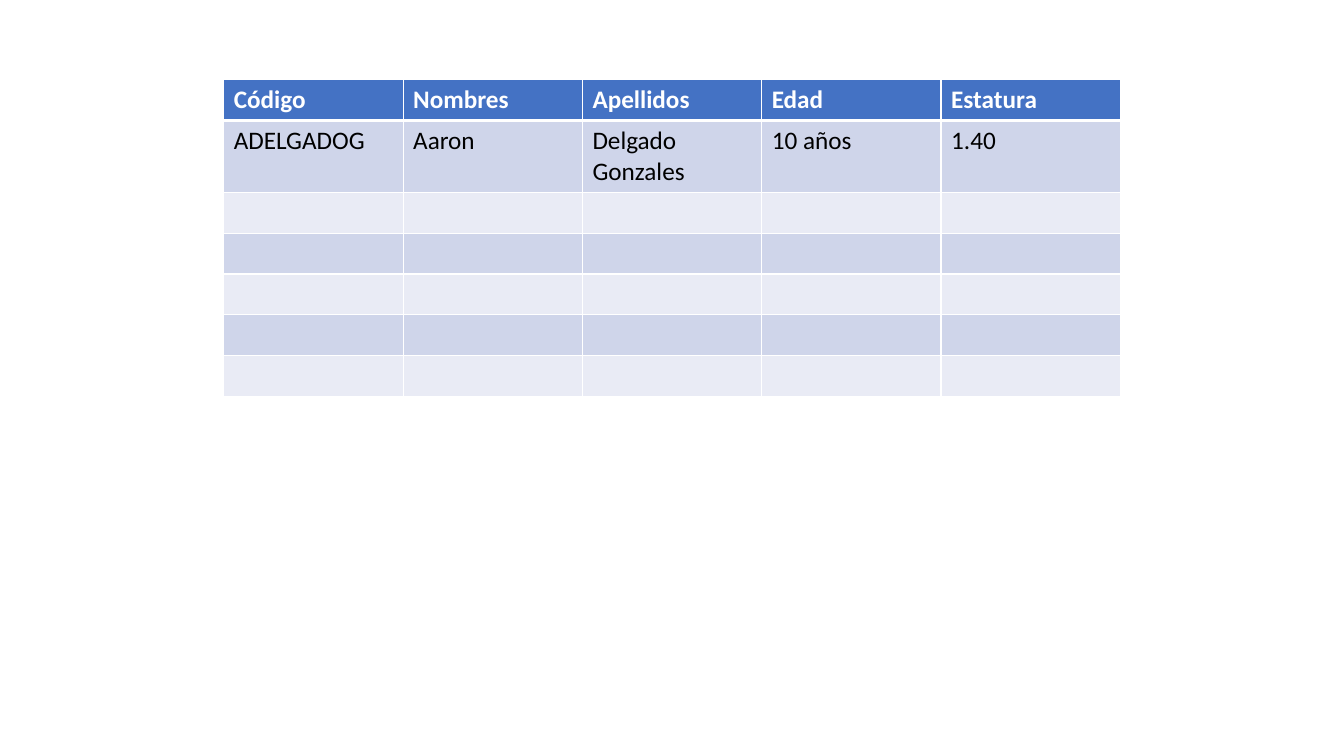
from dataclasses import dataclass

from lxml import etree
from pptx import Presentation
from pptx import util as u
from pptx.dml import color
from pptx.oxml import ns


@dataclass(frozen=True)
class Theme:
    font: str = "Calibri"
    size: int = 18
    header: str = "4472C4"
    bands: tuple = ("E9EBF5", "CFD5EA")
    light: str = "FFFFFF"
    dark: str = "000000"


theme = Theme()


def write(cell, words, ink=theme.dark, bold=False):
    line = cell.text_frame.paragraphs[0]
    line.text = words
    for run in line.runs:
        run.font.name = theme.font
        run.font.size = u.Pt(theme.size)
        run.font.bold = bold
        run.font.color.rgb = color.RGBColor.from_string(ink)


def add_border(cell, side, points):
    border = etree.SubElement(cell._tc.get_or_add_tcPr(), ns.qn(f"a:{side}"), w=str(u.Pt(points)))
    fill = etree.SubElement(border, ns.qn("a:solidFill"))
    etree.SubElement(fill, ns.qn("a:srgbClr"), val=theme.light)


# Slide
deck = Presentation()
deck.slide_width, deck.slide_height = u.Cm(33.87), u.Cm(19.05)
slide = deck.slides.add_slide(deck.slide_layouts[6])

# Content: headings, one person, rows left to fill in
headings = ["Código", "Nombres", "Apellidos", "Edad", "Estatura"]
person = ["ADELGADOG", "Aaron", "Delgado \nGonzales", "10 años", "1.40"]
blank_rows = 5
records = [headings, person] + [[""] * len(headings)] * blank_rows

# Table grid
frame = slide.shapes.add_table(len(records), len(headings),
                               u.Cm(5.64), u.Cm(2.01), u.Cm(22.58), u.Cm(7.95))
people = frame.table
for column in people.columns:
    column.width = u.Cm(4.52)
for row in people.rows:
    row.height = u.Cm(1.03)
frame.height = u.Cm(7.95)  # the two-line surname makes its row taller

# Cells: borders come before the fill in the cell properties
for r, record in enumerate(records):
    for c, words in enumerate(record):
        cell = people.cell(r, c)
        is_heading = r == 0
        for side in ("lnL", "lnR", "lnT", "lnB"):
            under_heading = (r, side) in ((0, "lnB"), (1, "lnT"))
            add_border(cell, side, 3 if under_heading else 1)
        cell.fill.solid()
        shade = theme.header if is_heading else theme.bands[r % 2]
        cell.fill.fore_color.rgb = color.RGBColor.from_string(shade)
        write(cell, words, ink=theme.light if is_heading else theme.dark, bold=is_heading)

deck.save("out.pptx")
